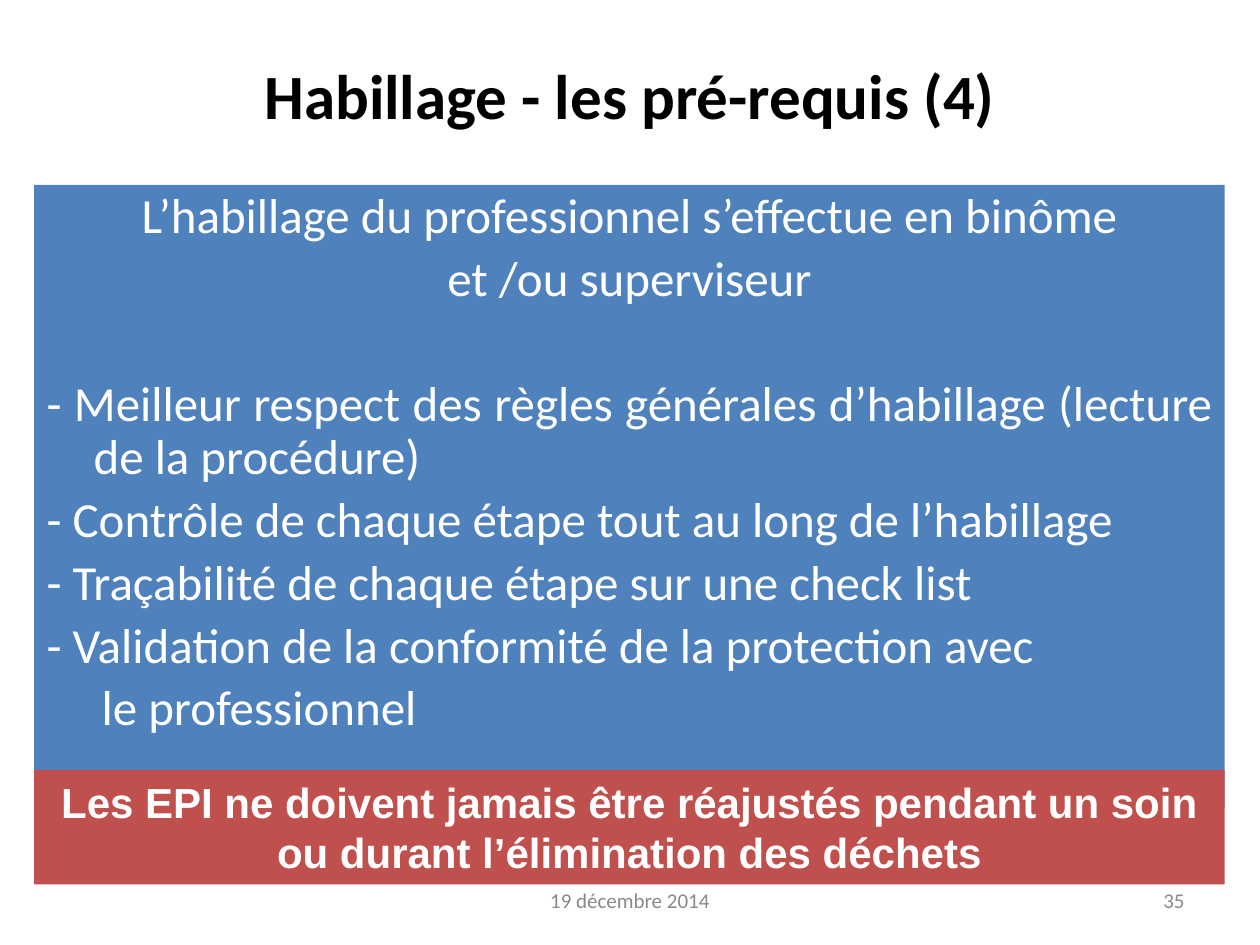
from pptx import Presentation
from pptx.dml.color import RGBColor
from pptx.enum.shapes import MSO_SHAPE as Shape
from pptx.enum.text import MSO_ANCHOR as Anchor, PP_ALIGN as Align
from pptx.util import Cm, Pt

COLORS = {
    "title": "000000",
    "panel": "4F81BD",
    "warning": "C0504D",
    "light": "FFFFFF",
    "date": "898989",
    "number": "8C8C8C",
}
PANEL_LEFT, PANEL_WIDTH = Cm(0.69), Cm(24)
HANGING = (0.95, -0.95)
LINE_GAP, SECTION_GAP = 5.6, 41.5

# Text, alignment, (left margin, first-line indent) in cm, space before in points
PANEL_LINES = [
    ("L’habillage du professionnel s’effectue en binôme", Align.CENTER, HANGING, 0),
    ("et /ou superviseur", Align.CENTER, HANGING, LINE_GAP),
    ("- Meilleur respect des règles générales d’habillage (lecture de la procédure)",
     Align.JUSTIFY, HANGING, SECTION_GAP),
    ("- Contrôle de chaque étape tout au long de l’habillage",
     Align.JUSTIFY, HANGING, LINE_GAP),
    ("- Traçabilité de chaque étape sur une check list",
     Align.JUSTIFY, HANGING, LINE_GAP),
    ("- Validation de la conformité de la protection avec",
     Align.JUSTIFY, (0, 0), LINE_GAP),
    ("le professionnel", Align.JUSTIFY, (1.11, 0), LINE_GAP),
]


def color(name):
    return RGBColor.from_string(COLORS[name])


def format_para(para, size, color_name, align, font="Calibri", bold=False):
    para.alignment = align
    for span in para.runs:
        span.font.name = font
        span.font.size = Pt(size)
        span.font.bold = bold
        span.font.color.rgb = color(color_name)


def set_indent(para, left, first_line):
    properties = para._p.get_or_add_pPr()
    properties.set("marL", str(Cm(left)))
    properties.set("indent", str(Cm(first_line)))


def set_title(page, text):
    title = page.shapes.title
    title.left, title.top, title.width, title.height = Cm(1.27), Cm(0.7), Cm(22.86), Cm(2.42)
    title.text_frame.text = text
    title.text_frame.vertical_anchor = Anchor.MIDDLE
    format_para(title.text_frame.paragraphs[0], 36, "title", Align.CENTER, bold=True)


def add_band(page, top, height, fill, anchor):
    """Add a filled rectangle of the panel width and return its text frame."""
    band = page.shapes.add_shape(Shape.RECTANGLE, PANEL_LEFT, top, PANEL_WIDTH, height)
    band.shadow.inherit = False
    band.fill.solid()
    band.fill.fore_color.rgb = color(fill)
    band.line.fill.background()
    band.text_frame.word_wrap = True
    band.text_frame.vertical_anchor = anchor
    return band.text_frame


def add_panel(page):
    frame = add_band(page, Cm(3.73), Cm(12.57), "panel", Anchor.TOP)
    frame.text = "\n".join(line[0] for line in PANEL_LINES)
    for para, (_, align, indent, gap) in zip(frame.paragraphs, PANEL_LINES):
        set_indent(para, *indent)
        para.line_spacing = 0.9
        para.space_before = Pt(gap)
        format_para(para, 28, "light", align)


def add_warning(page, text):
    frame = add_band(page, Cm(15.52), Cm(2.31), "warning", Anchor.TOP)
    frame.text = text
    format_para(frame.paragraphs[0], 24, "light", Align.CENTER, "Arial", bold=True)


def add_footer(page, text, left, width, color_name, align):
    box = page.shapes.add_textbox(left, Cm(17.65), width, Cm(1.01))
    frame = box.text_frame
    frame.word_wrap = True
    frame.vertical_anchor = Anchor.MIDDLE
    frame.text = text
    format_para(frame.paragraphs[0], 12, color_name, align)


def main():
    deck = Presentation()
    deck.slide_width, deck.slide_height = Cm(25.4), Cm(19.05)
    page = deck.slides.add_slide(deck.slide_layouts[5])
    add_footer(page, "19 décembre 2014", Cm(8.68), Cm(8.04), "date", Align.CENTER)
    add_footer(page, "35", Cm(18.2), Cm(5.93), "number", Align.RIGHT)
    set_title(page, "Habillage - les pré-requis (4)")
    add_panel(page)
    add_warning(page, "Les EPI ne doivent jamais être réajustés pendant un soin "
                      "ou durant l’élimination des déchets")
    deck.save("out.pptx")


if __name__ == "__main__":
    main()
